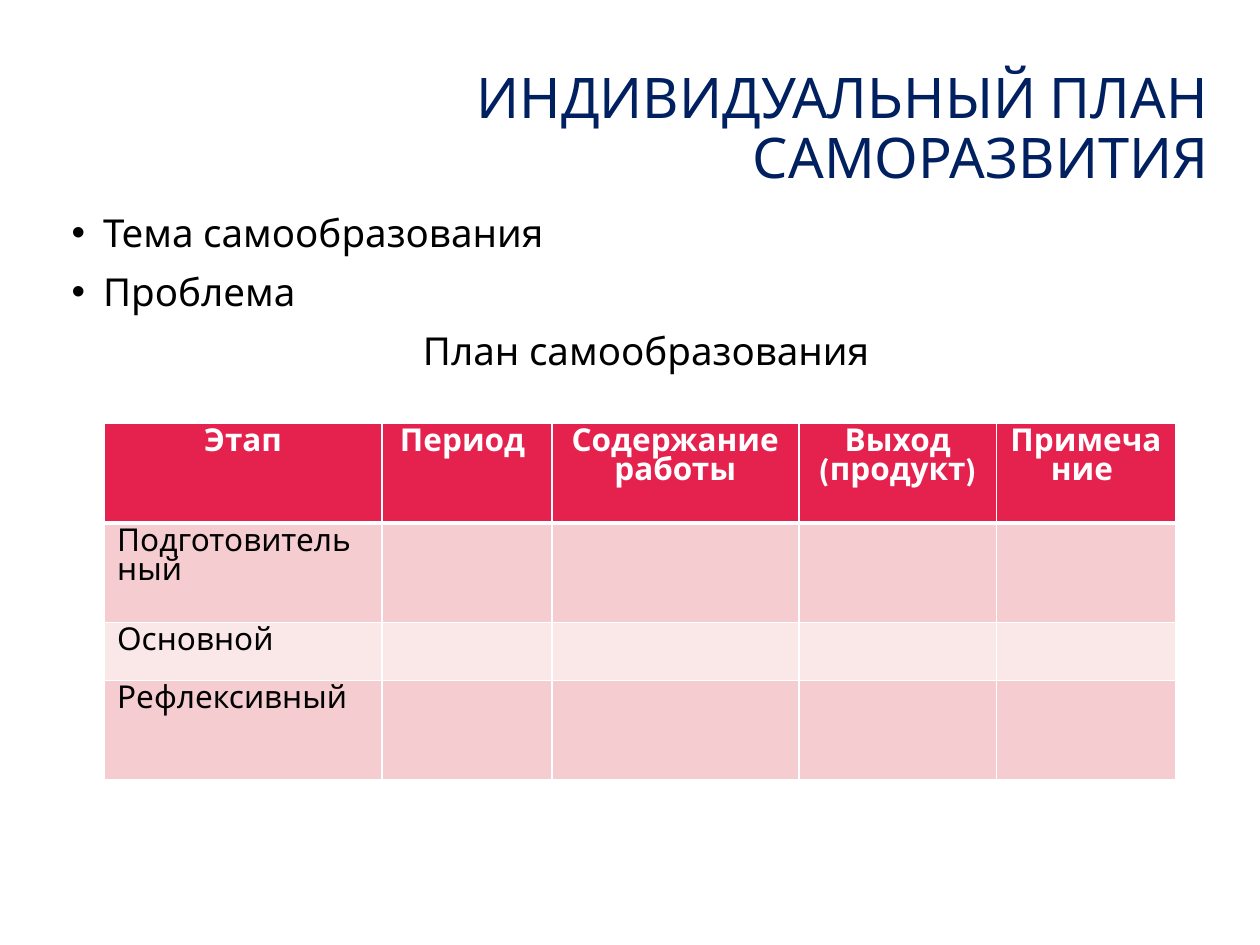
"""Build the slide with the individual self-development plan and its table of stages."""
from dataclasses import dataclass, field

import pptx
import pptx.dml.color
import pptx.enum.text
import pptx.oxml.ns
import pptx.util
from lxml import etree

COLORS = {"title": "002060", "text": "000000", "white": "FFFFFF",
          "header": "E5224E", "dark": "F5CDD0", "light": "FAE8E9"}
FONT = "League Spartan"
WIDTH, HEIGHT = 10, 7.5
ALIGN = pptx.enum.text.PP_ALIGN
ANCHOR = pptx.enum.text.MSO_ANCHOR


@dataclass
class Line:
    text: str
    size: float
    color: str = "text"
    bold: bool = False
    bullet: bool = False
    indent: float = 0
    fmt: dict = field(default_factory=dict)


@dataclass
class Box:
    left: float
    top: float
    width: float
    height: float
    lines: list[Line]
    anchor: ANCHOR = ANCHOR.TOP


def rgb(name: str) -> pptx.dml.color.RGBColor:
    return pptx.dml.color.RGBColor.from_string(COLORS[name])


def apply(obj, values: dict) -> None:
    for name, value in values.items():
        setattr(obj, name, value)


def write_line(p, line: Line) -> None:
    pPr = p._p.get_or_add_pPr()
    apply(p, line.fmt)
    if line.indent:
        pPr.set("marL", str(pptx.util.Inches(line.indent)))
    if line.bullet:
        pPr.set("indent", str(-pptx.util.Inches(line.indent)))
        for tag, name, value in (("a:buFont", "typeface", "Arial"), ("a:buChar", "char", "•")):
            etree.SubElement(pPr, pptx.oxml.ns.qn(tag)).set(name, value)
    r = p.add_run()
    r.text = line.text
    apply(r.font, {"name": FONT, "size": pptx.util.Pt(line.size), "bold": line.bold})
    r.font.color.rgb = rgb(line.color)


def add_box(s, box: Box) -> None:
    sp = s.shapes.add_textbox(*(pptx.util.Inches(share * side) for share, side in zip(
        (box.left, box.top, box.width, box.height), (WIDTH, HEIGHT) * 2)))
    tf = sp.text_frame
    apply(tf, {"word_wrap": True, "vertical_anchor": box.anchor})
    for i, line in enumerate(box.lines):
        write_line(tf.add_paragraph() if i else tf.paragraphs[0], line)


def set_borders(cell, bottom: float) -> None:
    tcPr = cell._tc.get_or_add_tcPr()
    widths = {"lnL": 1, "lnR": 1, "lnT": 1, "lnB": bottom}
    for i, (tag, width) in enumerate(widths.items()):
        ln = etree.Element(pptx.oxml.ns.qn("a:" + tag), w=str(pptx.util.Pt(width)))
        fill = etree.SubElement(ln, pptx.oxml.ns.qn("a:solidFill"))
        etree.SubElement(fill, pptx.oxml.ns.qn("a:srgbClr"), val=COLORS["white"])
        tcPr.insert(i, ln)


def add_stage_table(s, left: float, top: float, cols: list[float], rows: list[float],
                    headers: list[str], stages: list[str]) -> None:
    sp = s.shapes.add_table(len(rows), len(cols), *map(pptx.util.Inches, (
        left * WIDTH, top * HEIGHT, sum(cols), sum(rows))))
    table = sp.table
    for col, width in zip(table.columns, cols):
        col.width = pptx.util.Inches(width)
    for row, height in zip(table.rows, rows):
        row.height = pptx.util.Inches(height)
    texts = [headers] + [[stage] + [""] * (len(cols) - 1) for stage in stages]
    for i, row in enumerate(texts):
        head = i == 0
        for j, text in enumerate(row):
            cell = table.cell(i, j)
            cell.fill.solid()
            cell.fill.fore_color.rgb = rgb("header" if head else "dark" if i % 2 else "light")
            set_borders(cell, 3 if head else 1)
            if text:
                write_line(cell.text_frame.paragraphs[0], Line(
                    text, 18, "white" if head else "text", head,
                    fmt={"alignment": ALIGN.CENTER if head else ALIGN.LEFT}))


def main() -> None:
    prs = pptx.Presentation()
    apply(prs, {"slide_width": pptx.util.Inches(WIDTH), "slide_height": pptx.util.Inches(HEIGHT)})
    s = prs.slides.add_slide(prs.slide_layouts[6])
    first = {"line_spacing": 0.9}
    later = first | {"space_before": pptx.util.Pt(10)}
    boxes = [
        Box(0.272, 0.08, 0.697, 0.116, [
            Line("ИНДИВИДУАЛЬНЫЙ ПЛАН САМОРАЗВИТИЯ", 32, "title",
                 fmt=first | {"alignment": ALIGN.RIGHT})], ANCHOR.MIDDLE),
        Box(0.047, 0.22, 0.91, 0.7, [
            Line("Тема самообразования", 22, bullet=True, indent=0.25, fmt=first),
            Line("Проблема", 22, bullet=True, indent=0.25, fmt=later),
            Line("План самообразования", 22, indent=0.22,
                 fmt=later | {"alignment": ALIGN.CENTER})]),
    ]
    for box in boxes:
        add_box(s, box)
    add_stage_table(
        s, 0.083, 0.448, [2.2, 1.35, 1.96, 1.57, 1.42], [0.79, 0.79, 0.46, 0.79],
        ["Этап", "Период ", "Содержание работы", "Выход (продукт)", "Примечание "],
        ["Подготовитель ный", "Основной", "Рефлексивный"])
    prs.save("out.pptx")


if __name__ == "__main__":
    main()
